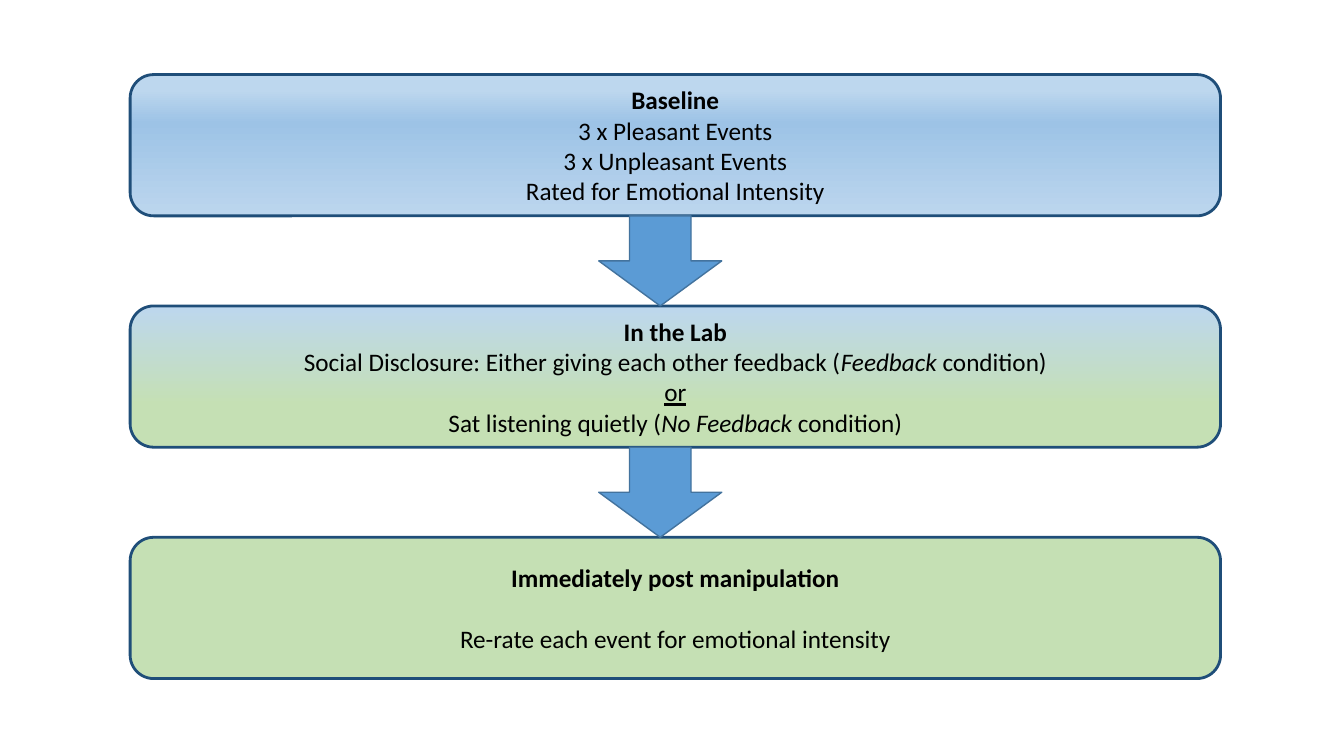
"""Draw a three-stage study procedure as boxes joined by arrows."""
from lxml.etree import SubElement
from pptx import Presentation
from pptx.dml.color import RGBColor
from pptx.enum.shapes import MSO_SHAPE
from pptx.enum.text import MSO_ANCHOR, PP_ALIGN
from pptx.oxml.ns import qn
from pptx.util import Cm, Pt

BOLD = {"bold": True}
SLANT = {"italic": True}
LINED = {"underline": True}
STAGES = [
    {
        "fill": [(11, "BDD7EE"), (34, "9DC3E6"), (100, "BCD6EE")],
        "gap": 0,
        "text": [
            [("Baseline", BOLD)],
            [("3 x Pleasant Events", {})],
            [("3 x Unpleasant Events", {})],
            [("Rated for Emotional Intensity", {})],
        ],
    },
    {
        "fill": [(0, "BDD7EE"), (70, "C5E0B4")],
        "gap": 0,
        "text": [
            [("In the Lab", BOLD)],
            [
                ("Social Disclosure: Either giving each other feedback (", {}),
                ("Feedback", SLANT),
                (" condition)", {}),
            ],
            [("or", LINED)],
            [
                ("Sat listening quietly (", {}),
                ("No Feedback ", SLANT),
                ("condition)", {}),
            ],
        ],
    },
    {
        "fill": [(0, "C5E0B4")],
        "gap": 22,
        "text": [
            [("Immediately post manipulation", BOLD)],
            [("Re-rate each event for emotional intensity", {})],
        ],
    },
]
FONT = {"name": "Calibri", "size": Pt(18), "bold": False}
LEFT, TOP, WIDTH, HEIGHT = 3.28, 1.88, 27.48, 3.56
PITCH = 5.83
ARROW = {"left": 15.09, "width": 3.1}


def paint(color, code):
    color.rgb = RGBColor.from_string(code)


def blend(shape, stops):
    shape.fill.gradient()
    shape.fill.gradient_angle = 270
    bands = shape.element.spPr.find(qn("a:gradFill")).find(qn("a:gsLst"))
    bands.clear()
    for spot, code in stops:
        stop = SubElement(bands, qn("a:gs"), pos=str(spot * 1000))
        SubElement(stop, qn("a:srgbClr"), val=code)


def draw(slide, kind, area, fill, edge, weight):
    shape = slide.shapes.add_shape(kind, *[Cm(side) for side in area])
    shape.shadow.inherit = False
    if len(fill) > 1:
        blend(shape, fill)
    else:
        shape.fill.solid()
        paint(shape.fill.fore_color, fill[0][1])
    paint(shape.line.color, edge)
    shape.line.width = Pt(weight)
    return shape


def write(shape, lines, gap):
    frame = shape.text_frame
    frame.word_wrap = True
    frame.vertical_anchor = MSO_ANCHOR.MIDDLE
    for row, parts in enumerate(lines):
        para = frame.add_paragraph() if row else frame.paragraphs[0]
        para.alignment = PP_ALIGN.CENTER
        para.space_before = Pt(gap if row else 0)
        for words, style in parts:
            run = para.add_run()
            run.text = words
            for key, value in {**FONT, **style}.items():
                setattr(run.font, key, value)
            paint(run.font.color, "000000")


def main():
    deck = Presentation()
    deck.slide_width, deck.slide_height = Cm(33.87), Cm(19.05)
    slide = deck.slides.add_slide(deck.slide_layouts[6])
    tops = [TOP + PITCH * step for step in range(len(STAGES))]
    for top, stage in zip(tops, STAGES):
        area = (LEFT, top, WIDTH, HEIGHT)
        box = draw(slide, MSO_SHAPE.ROUNDED_RECTANGLE, area, stage["fill"], "1F4E79", 2)
        write(box, stage["text"], stage["gap"])
    for top in tops[:-1]:
        area = (ARROW["left"], top + HEIGHT, ARROW["width"], PITCH - HEIGHT)
        draw(slide, MSO_SHAPE.DOWN_ARROW, area, [(0, "5B9BD5")], "43739E", 1)
    deck.save("out.pptx")


if __name__ == "__main__":
    main()
